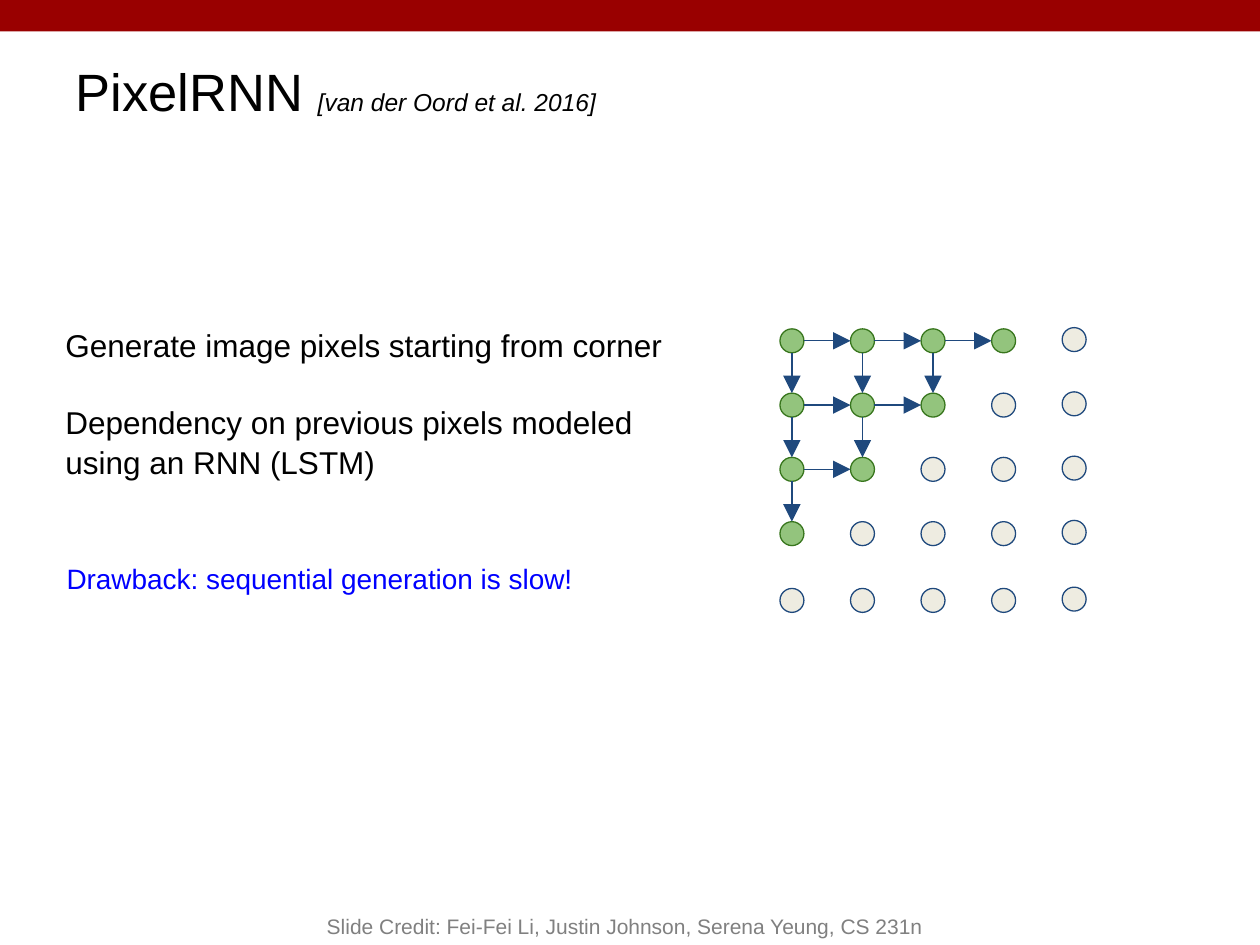
from lxml import etree
from pptx import Presentation
from pptx.dml.color import RGBColor
from pptx.enum.shapes import MSO_CONNECTOR, MSO_SHAPE
from pptx.enum.text import MSO_ANCHOR, MSO_AUTO_SIZE, PP_ALIGN
from pptx.oxml.ns import qn
from pptx.util import Inches, Pt

STRAIGHT = MSO_CONNECTOR.STRAIGHT
OVAL, RECTANGLE = MSO_SHAPE.OVAL, MSO_SHAPE.RECTANGLE
TOP, MIDDLE, BOTTOM = MSO_ANCHOR.TOP, MSO_ANCHOR.MIDDLE, MSO_ANCHOR.BOTTOM
LEFT, CENTER = PP_ALIGN.LEFT, PP_ALIGN.CENTER
NO_AUTOFIT = MSO_AUTO_SIZE.NONE

BLACK = RGBColor(0x00, 0x00, 0x00)
BLUE = RGBColor(0x00, 0x00, 0xFF)
GRAY = RGBColor(0x80, 0x80, 0x80)
RED = RGBColor(0x99, 0x00, 0x00)
GREEN = RGBColor(0x93, 0xC4, 0x7D)
DARK_GREEN = RGBColor(0x38, 0x76, 0x1D)
CREAM = RGBColor(0xEE, 0xEC, 0xE1)
NAVY = RGBColor(0x1F, 0x49, 0x7D)


def add_text(paragraph, text, size, color=BLACK, italic=False, align=LEFT):
    paragraph.alignment = align
    run = paragraph.add_run()
    run.text = text
    run.font.name = "Arial"
    run.font.size = Pt(size)
    run.font.italic = italic
    run.font.color.rgb = color


def prepare_frame(shape, anchor=TOP, vertical_margin=0.1):
    frame = shape.text_frame
    frame.word_wrap = True
    frame.auto_size = NO_AUTOFIT
    frame.vertical_anchor = anchor
    frame.margin_left = frame.margin_right = Inches(0.1)
    frame.margin_top = frame.margin_bottom = Inches(vertical_margin)
    return frame


presentation = Presentation()
presentation.slide_width = Inches(10)
presentation.slide_height = Inches(7.5)
slide = presentation.slides.add_slide(presentation.slide_layouts[5])

# Band and title
band = slide.shapes.add_shape(RECTANGLE, 0, 0, Inches(10), Inches(0.25))
band.shadow.inherit = False
band.fill.solid()
band.fill.fore_color.rgb = RED
band.line.fill.background()

title = slide.shapes.title
title.left, title.top = Inches(0.5), Inches(0.25)
title.width, title.height = Inches(9), Inches(0.94)
heading = prepare_frame(title, MIDDLE).paragraphs[0]
add_text(heading, "PixelRNN ", 30)
add_text(heading, "[van der Oord et al. 2016]", 14, italic=True)

# Pixel grid: the first four diagonals are already generated
column_lefts = [6.19 + 0.56 * column for column in range(5)]
row_tops = [2.61, 3.12, 3.63, 4.14, 4.67]
diameter = 0.19
for row, top in enumerate(row_tops):
    for column, left in enumerate(column_lefts):
        generated = row + column < 4
        raised = 0.01 if column == 4 else 0
        pixel = slide.shapes.add_shape(OVAL, Inches(left), Inches(top - raised),
                                       Inches(diameter), Inches(diameter))
        pixel.shadow.inherit = False
        pixel.fill.solid()
        pixel.fill.fore_color.rgb = GREEN if generated else CREAM
        pixel.line.color.rgb = DARK_GREEN if generated else NAVY
        pixel.line.width = Pt(0.75)

# Dependencies on the pixels to the left and above
for row in range(3):
    for column in range(3 - row):
        left, top = column_lefts[column], row_tops[row]
        middle_x, middle_y = left + diameter / 2, top + diameter / 2
        rightward = (left + diameter, middle_y, column_lefts[column + 1], middle_y)
        downward = (middle_x, top + diameter, middle_x, row_tops[row + 1])
        for ends in (rightward, downward):
            arrow = slide.shapes.add_connector(STRAIGHT, *[Inches(end) for end in ends])
            arrow.line.color.rgb = NAVY
            arrow.line.width = Pt(0.75)
            line = arrow.line._get_or_add_ln()
            etree.SubElement(line, qn("a:tailEnd"), type="triangle", w="lg", len="lg")
            etree.SubElement(arrow._element.spPr, qn("a:effectLst"))

# Explanation
explanation = slide.shapes.add_textbox(Inches(0.42), Inches(2.47), Inches(5.01), Inches(1.46))
frame = prepare_frame(explanation)
first, second = frame.paragraphs[0], frame.add_paragraph()
add_text(first, "Generate image pixels starting from corner", 18)
add_text(second, "Dependency on previous pixels modeled using an RNN (LSTM)", 18)
first.line_spacing = second.line_spacing = 1.05
second.space_before = Pt(21.7)

drawback = slide.shapes.add_textbox(Inches(0.43), Inches(4.36), Inches(4.23), Inches(0.44))
add_text(prepare_frame(drawback).paragraphs[0],
         "Drawback: sequential generation is slow!", 16, color=BLUE)

credit = slide.shapes.add_textbox(Inches(2), Inches(7), Inches(5.92), Inches(0.5))
add_text(prepare_frame(credit, BOTTOM, 0.05).paragraphs[0],
         "Slide Credit: Fei-Fei Li, Justin Johnson, Serena Yeung, CS 231n",
         12, color=GRAY, align=CENTER)

presentation.save("out.pptx")
